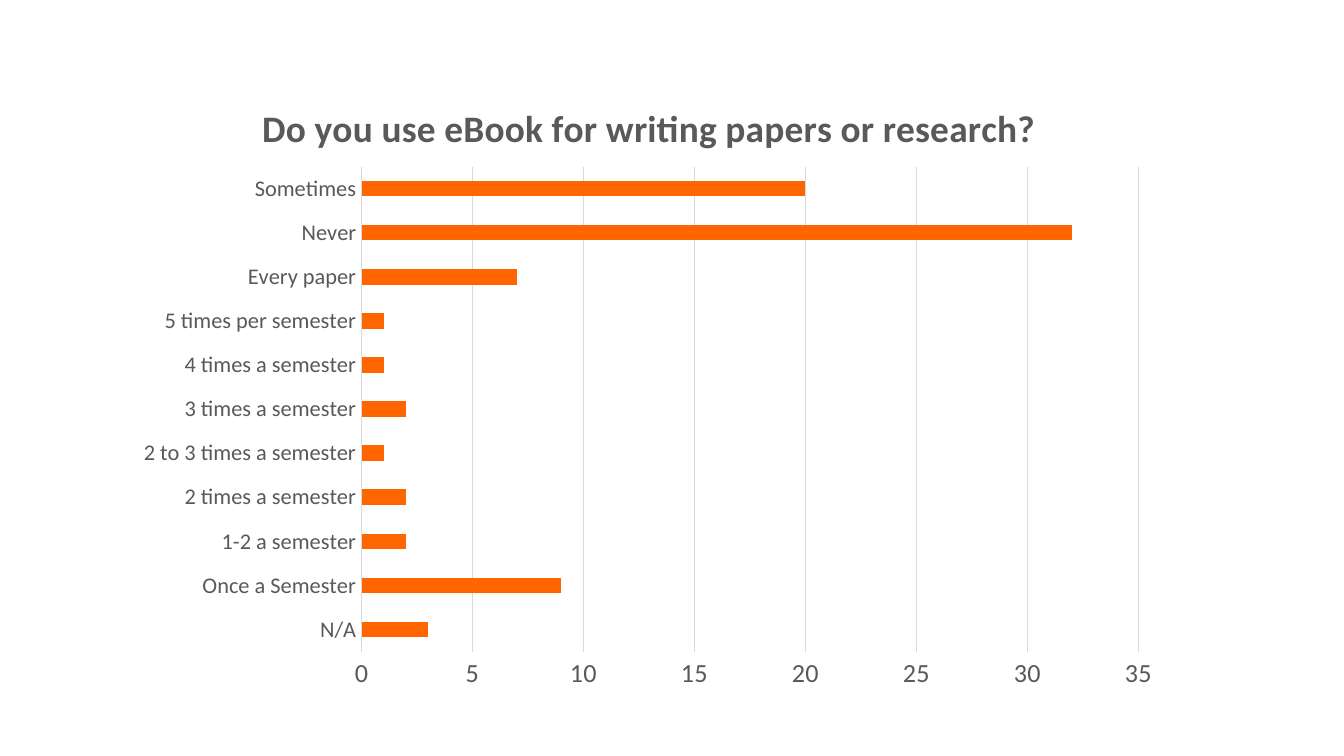
from lxml import etree
from pptx import Presentation
from pptx.chart.data import CategoryChartData
from pptx.dml.color import RGBColor
from pptx.enum.chart import XL_CHART_TYPE, XL_TICK_MARK
from pptx.oxml.ns import qn
from pptx.util import Inches, Pt

TITLE = "Do you use eBook for writing papers or research?"
ANSWERS = [
    ("N/A", 3),
    ("Once a Semester", 9),
    ("1-2 a semester", 2),
    ("2 times a semester", 2),
    ("2 to 3 times a semester", 1),
    ("3 times a semester", 2),
    ("4 times a semester", 1),
    ("5 times per semester", 1),
    ("Every paper", 7),
    ("Never", 32),
    ("Sometimes", 20),
]
FONT = "Calibri"
ORANGE = RGBColor(0xFF, 0x66, 0x00)
TEXT_GRAY = RGBColor(0x59, 0x59, 0x59)
LINE_GRAY = RGBColor(0xD9, 0xD9, 0xD9)

# Left, top, width, height in inches
CHART_BOX = (0.92, 0.56, 7.82, 4.66)
PLOT_BOX = (2.69, 1.24, 5.78, 3.61)


def style_font(font, size, bold=False):
    font.name = FONT
    font.size = Pt(size)
    font.bold = bold
    font.color.rgb = TEXT_GRAY


def style_line(line):
    line.color.rgb = LINE_GRAY
    line.width = Pt(0.75)


def place_plot(chart):
    """Fix the plot area inside the chart, as fractions of the chart box."""
    left, top, width, height = CHART_BOX
    x, y, w, h = PLOT_BOX
    settings = [
        ("layoutTarget", "inner"), ("xMode", "edge"), ("yMode", "edge"),
        ("x", (x - left) / width), ("y", (y - top) / height),
        ("w", w / width), ("h", h / height),
    ]
    area = chart.plots[0]._element.getparent()
    layout = area.find(qn("c:layout"))
    if layout is None:
        layout = etree.Element(qn("c:layout"))
        area.insert(0, layout)
    manual = etree.SubElement(layout, qn("c:manualLayout"))
    for name, value in settings:
        etree.SubElement(manual, qn(f"c:{name}")).set("val", str(value))


prs = Presentation()
prs.slide_width = Inches(10)
prs.slide_height = prs.slide_width * 9 // 16
s = prs.slides.add_slide(prs.slide_layouts[6])

# Survey chart
data = CategoryChartData()
data.categories = [answer for answer, _ in ANSWERS]
data.add_series("Series 1", [count for _, count in ANSWERS])
chart = s.shapes.add_chart(
    XL_CHART_TYPE.BAR_CLUSTERED, *map(Inches, CHART_BOX), data
).chart
chart.has_legend = False
style_font(chart.font, 10)
place_plot(chart)

# Title
chart.has_title = True
chart.chart_title.include_in_layout = False
p = chart.chart_title.text_frame.paragraphs[0]
p.text = TITLE
style_font(p.font, 20, bold=True)

# Bars
plot = chart.plots[0]
plot.gap_width = 182
plot.vary_by_categories = False
bars = plot.series[0].format.fill
bars.solid()
bars.fore_color.rgb = ORANGE

# Axes
for axis, size in ((chart.category_axis, 12), (chart.value_axis, 14)):
    axis.major_tick_mark = axis.minor_tick_mark = XL_TICK_MARK.NONE
    style_font(axis.tick_labels.font, size)
style_line(chart.category_axis.format.line)
value_axis = chart.value_axis
value_axis.minimum_scale, value_axis.maximum_scale = 0, 35
value_axis.major_unit = 5
value_axis.format.line.fill.background()
style_line(value_axis.major_gridlines.format.line)

prs.save("out.pptx")
